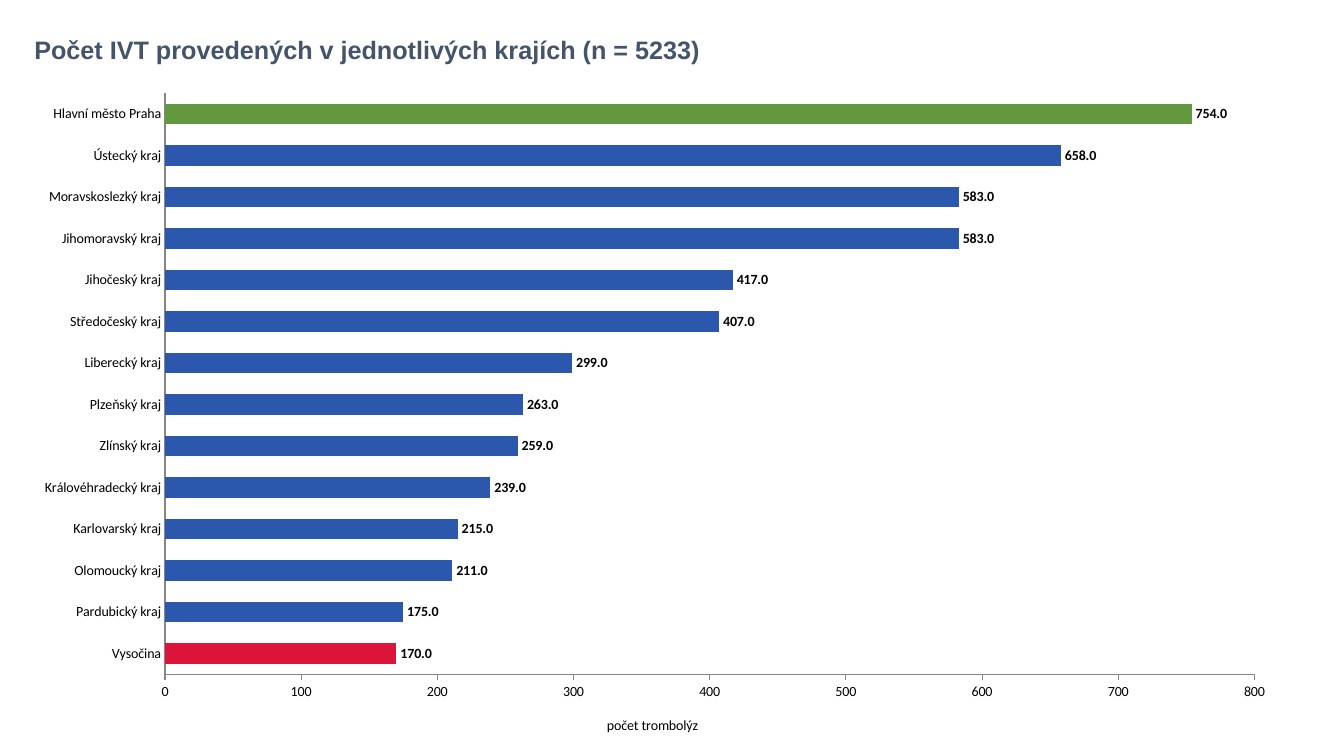
from dataclasses import dataclass

from lxml.etree import SubElement
from pptx import Presentation
from pptx.chart.axis import _BaseAxis as Axis
from pptx.chart.chart import Chart
from pptx.chart.data import CategoryChartData as ChartData
from pptx.dml.color import RGBColor as Color
from pptx.enum.chart import XL_CHART_TYPE as ChartType
from pptx.enum.chart import XL_LABEL_POSITION as LabelPosition
from pptx.enum.chart import XL_TICK_MARK as TickMark
from pptx.enum.text import MSO_ANCHOR as Anchor
from pptx.enum.text import PP_ALIGN as Align
from pptx.oxml.ns import qn
from pptx.slide import Slide
from pptx.util import Cm, Pt


@dataclass(frozen=True)
class Theme:
    title_font: str = "Arial"
    chart_font: str = "Calibri"
    title_size: Pt = Pt(18)
    chart_size: Pt = Pt(10)
    title_color: Color = Color(0x44, 0x54, 0x6A)
    text_color: Color = Color(0, 0, 0)
    axis_color: Color = Color(0x86, 0x86, 0x86)
    bar_color: Color = Color(0x2B, 0x58, 0xAD)
    lowest_color: Color = Color(0xDC, 0x14, 0x3C)
    highest_color: Color = Color(0x62, 0x99, 0x3E)


@dataclass(frozen=True)
class Region:
    name: str
    thrombolyses: int


THEME = Theme()
REGIONS = [
    Region("Vysočina", 170),
    Region("Pardubický kraj", 175),
    Region("Olomoucký kraj", 211),
    Region("Karlovarský kraj", 215),
    Region("Královéhradecký kraj", 239),
    Region("Zlínský kraj", 259),
    Region("Plzeňský kraj", 263),
    Region("Liberecký kraj", 299),
    Region("Středočeský kraj", 407),
    Region("Jihočeský kraj", 417),
    Region("Jihomoravský kraj", 583),
    Region("Moravskoslezký kraj", 583),
    Region("Ústecký kraj", 658),
    Region("Hlavní město Praha", 754),
]


def add_title(slide: Slide, text: str) -> None:
    title = slide.shapes.title
    title.left, title.top, title.width, title.height = Cm(0.61), Cm(0.38), Cm(27.79), Cm(1.83)
    frame = title.text_frame
    frame.text = text
    frame.word_wrap = True
    frame.vertical_anchor = Anchor.MIDDLE
    paragraph = frame.paragraphs[0]
    paragraph.alignment = Align.LEFT
    paragraph.line_spacing = 0.9
    font = paragraph.font
    font.name, font.size, font.bold = THEME.title_font, THEME.title_size, True
    font.color.rgb = THEME.title_color


def set_layout(parent, position: int, **settings: object) -> None:
    layout = parent.find(qn("c:layout"))
    if layout is None:
        layout = SubElement(parent, qn("c:layout"))
        parent.insert(position, layout)
    manual = SubElement(layout, qn("c:manualLayout"))
    for name, value in settings.items():
        SubElement(manual, qn(f"c:{name}")).set("val", str(value))


def style_axis(axis: Axis, tick_mark: TickMark) -> None:
    axis.has_major_gridlines = False
    axis.major_tick_mark = tick_mark
    axis.minor_tick_mark = TickMark.NONE
    axis.tick_labels.font.size = THEME.chart_size
    axis.format.line.color.rgb = THEME.axis_color
    axis.format.line.width = Pt(0.75)


def style_value_axis(chart: Chart) -> None:
    axis = chart.value_axis
    style_axis(axis, TickMark.OUTSIDE)
    axis.minimum_scale, axis.maximum_scale, axis.major_unit = 0, 800, 100
    axis.tick_labels.number_format = "0"
    axis.tick_labels.number_format_is_linked = False
    axis_title = axis.axis_title
    axis_title.text_frame.text = "počet trombolýz"
    font = axis_title.text_frame.paragraphs[0].font
    font.name, font.size, font.bold = THEME.chart_font, THEME.chart_size, False
    font.color.rgb = THEME.text_color
    set_layout(axis_title.element, 1, xMode="edge", yMode="edge", x=0.46, y=0.94)


def style_bars(chart: Chart) -> None:
    plot = chart.plots[0]
    plot.gap_width = 100
    plot.vary_by_categories = False
    series = plot.series[0]
    series.invert_if_negative = False
    series.format.fill.solid()
    series.format.fill.fore_color.rgb = THEME.bar_color
    highlights = {0: THEME.lowest_color, len(REGIONS) - 1: THEME.highest_color}
    for index, color in highlights.items():
        fill = series.points[index].format.fill
        fill.solid()
        fill.fore_color.rgb = color
    labels = series.data_labels
    labels.show_value = True
    labels.position = LabelPosition.OUTSIDE_END
    labels.number_format = "0.0"
    labels.number_format_is_linked = False
    labels.font.size, labels.font.bold = THEME.chart_size, True


def add_region_chart(slide: Slide) -> None:
    data = ChartData()
    data.categories = [region.name for region in REGIONS]
    data.add_series("Series 1", [region.thrombolyses for region in REGIONS])
    chart = slide.shapes.add_chart(
        ChartType.BAR_CLUSTERED, Cm(0.51), Cm(2.01), Cm(32), Cm(16.99), data
    ).chart
    chart.has_legend = False
    chart.has_title = False
    chart.font.name, chart.font.size = THEME.chart_font, Pt(18)
    chart.font.color.rgb = THEME.text_color
    style_axis(chart.category_axis, TickMark.NONE)
    style_value_axis(chart)
    style_bars(chart)
    plot_area = chart.element.find(f".//{qn('c:plotArea')}")
    set_layout(
        plot_area, 0, layoutTarget="inner", xMode="edge", yMode="edge",
        x=0.114, y=0.02, w=0.858, h=0.862,
    )


def main() -> None:
    presentation = Presentation()
    presentation.slide_width, presentation.slide_height = Cm(33.87), Cm(19.05)
    slide = presentation.slides.add_slide(presentation.slide_layouts[5])
    add_title(slide, "Počet IVT provedených v jednotlivých krajích (n = 5233)")
    add_region_chart(slide)
    presentation.save("out.pptx")


if __name__ == "__main__":
    main()
